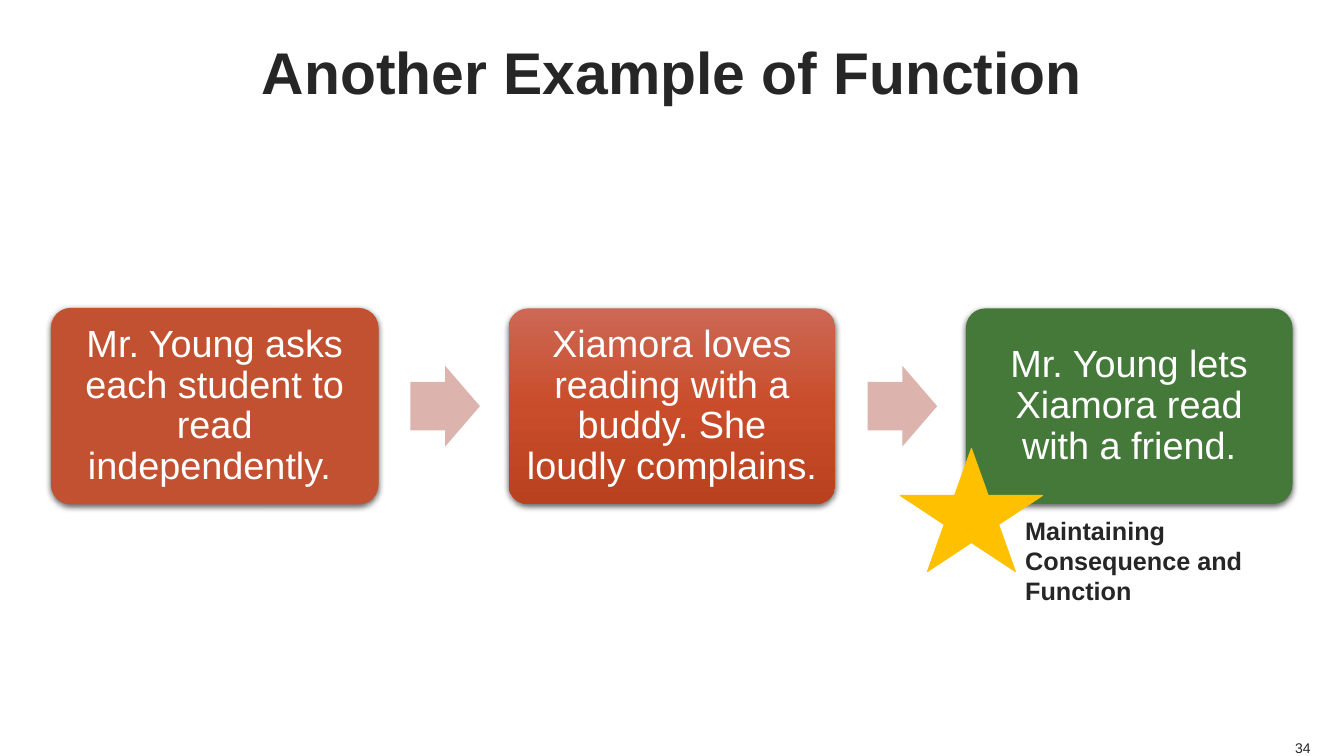
from lxml import etree
from pptx import Presentation
from pptx.dml.color import RGBColor
from pptx.enum.shapes import MSO_SHAPE
from pptx.enum.text import MSO_ANCHOR, MSO_AUTO_SIZE, PP_ALIGN
from pptx.oxml.ns import qn
from pptx.util import Inches, Pt

BOX, ARROW, STAR = (MSO_SHAPE.ROUNDED_RECTANGLE, MSO_SHAPE.RIGHT_ARROW,
                    MSO_SHAPE.STAR_5_POINT)
LEFT, MID, RIGHT = PP_ALIGN.LEFT, PP_ALIGN.CENTER, PP_ALIGN.RIGHT
TOP, CENTER, BOTTOM = MSO_ANCHOR.TOP, MSO_ANCHOR.MIDDLE, MSO_ANCHOR.BOTTOM

# Content
TITLE = "Another Example of Function"
STEPS = [
    ("Mr. Young asks each student to read independently. ", "trigger"),
    ("Xiamora loves reading with a buddy. She loudly complains.", "action"),
    ("Mr. Young lets Xiamora read with a friend.", "result"),
]
NOTE = "Maintaining Consequence and Function"
NUMBER = "34"

# Theme
THEME = {
    "font": "Arial",
    "ink": "262626", "white": "FFFFFF", "arrow": "DDB3AE", "star": "FFC000",
    "trigger": "C25131", "result": "447939",
    "action": [(0, "CC6855"), (50, "C94D2A"), (100, "B9411F")],
    "title": 42, "step": 27, "note": 18, "number": 10,
}

# Layout in inches
START, PITCH, ROW = 0.51, 4.535, 3.06
WIDE, HIGH = 3.24, 1.94
TIP_W, TIP_H, TIP_GAP = 0.69, 0.8, 0.32


def color(name):
    return RGBColor.from_string(THEME[name])


def write(shape, text, size, ink="ink", bold=False, align=LEFT, anchor=TOP,
          inset=(0, 0), wrap=True, space=None):
    frame = shape.text_frame
    side, edge = map(Inches, inset)
    look = {"word_wrap": wrap, "auto_size": MSO_AUTO_SIZE.NONE,
            "vertical_anchor": anchor, "margin_left": side,
            "margin_right": side, "margin_top": edge, "margin_bottom": edge}
    for key, value in look.items():
        setattr(frame, key, value)
    para = frame.paragraphs[0]
    para.alignment = align
    if space:
        para.line_spacing = space
    run = para.add_run()
    run.text = text
    look = {"name": THEME["font"], "size": Pt(THEME[size]), "bold": bold}
    for key, value in look.items():
        setattr(run.font, key, value)
    run.font.color.rgb = color(ink)


def place(slide, kind, spot, fill, line=None, adjust=()):
    shape = slide.shapes.add_shape(kind, *map(Inches, spot))
    shape.shadow.inherit = False
    if isinstance(THEME[fill], list):
        blend(shape, THEME[fill])
    else:
        shape.fill.solid()
        shape.fill.fore_color.rgb = color(fill)
    if line:
        shape.line.color.rgb = color(line)
        shape.line.width = Pt(0.75)
    else:
        shape.line.fill.background()
    for i, value in enumerate(adjust):
        shape.adjustments[i] = value
    return shape


def blend(shape, stops):
    """Fill from top to bottom through all the stops."""
    shape.fill.gradient()
    shape.fill.gradient_angle = 270
    stack = shape.element.spPr.find(qn("a:gradFill")).find(qn("a:gsLst"))
    for old in list(stack):
        stack.remove(old)
    for pos, tone in stops:
        stop = etree.SubElement(stack, qn("a:gs"), pos=str(pos * 1000))
        etree.SubElement(stop, qn("a:srgbClr"), val=tone)


def shade(shape):
    """Drop a soft shadow straight down."""
    effect = shape.element.spPr.find(qn("a:effectLst"))
    outer = etree.SubElement(effect, qn("a:outerShdw"), blurRad=str(Pt(4.5)),
                             dist=str(Pt(1.5)), dir="5400000",
                             rotWithShape="0")
    tone = etree.SubElement(outer, qn("a:srgbClr"), val="000000")
    etree.SubElement(tone, qn("a:alpha"), val="63000")


def label(slide, spot, text, size, **look):
    write(slide.shapes.add_textbox(*map(Inches, spot)), text, size, **look)


def main():
    deck = Presentation()
    deck.slide_width, deck.slide_height = Inches(13.33), Inches(7.5)
    slide = deck.slides.add_slide(deck.slide_layouts[5])

    # Title
    title = slide.shapes.title
    spot = {"left": 0.5, "top": 0, "width": 12.33, "height": 1.4}
    for key, value in spot.items():
        setattr(title, key, Inches(value))
    write(title, TITLE, "title", bold=True, align=MID, anchor=CENTER)

    # Steps, with an arrow after each but the last
    for i, (text, fill) in enumerate(STEPS):
        x = START + i * PITCH
        line = fill if fill == "trigger" else None
        box = place(slide, BOX, (x, ROW, WIDE, HIGH), fill, line, [0.1])
        shade(box)
        write(box, text, "step", ink="white", align=MID, anchor=CENTER,
              inset=(0.11, 0.11), space=0.9)
        if i < len(STEPS) - 1:
            y = ROW + (HIGH - TIP_H) / 2
            place(slide, ARROW, (x + WIDE + TIP_GAP, y, TIP_W, TIP_H),
                  "arrow", adjust=[0.6, 0.5])

    # Slide number
    label(slide, (12.83, 7.33, 0.17, 0.17), NUMBER, "number", align=RIGHT,
          anchor=BOTTOM, wrap=False)

    # Note and star
    label(slide, (10.07, 5.06, 3.26, 1.01), NOTE, "note", bold=True,
          inset=(0.1, 0.05))
    place(slide, STAR, (8.93, 4.45, 1.41, 1.22), "star", "star")

    deck.save("out.pptx")


if __name__ == "__main__":
    main()
